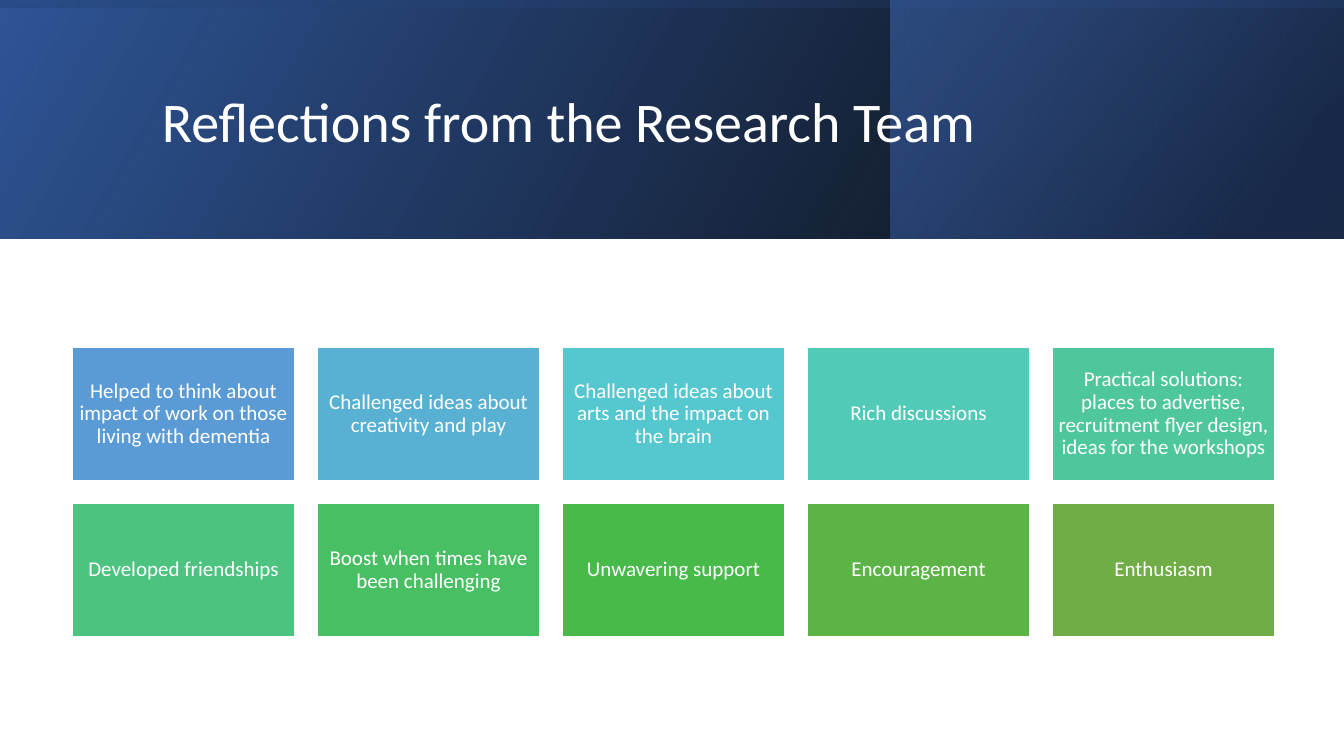
import dataclasses

import lxml.etree
import pptx
import pptx.dml.color
import pptx.enum.shapes
import pptx.enum.text
import pptx.oxml
import pptx.oxml.ns
import pptx.util

RGBColor = pptx.dml.color.RGBColor
WHITE = RGBColor(0xFF, 0xFF, 0xFF)
BLACK = RGBColor(0x00, 0x00, 0x00)
NAVY = RGBColor(0x20, 0x38, 0x64)
DEEP_BLUE = RGBColor(0x2F, 0x55, 0x97)
MID_BLUE = RGBColor(0x44, 0x72, 0xC4)
SKY = RGBColor(0x5B, 0x9B, 0xD5)
AZURE = RGBColor(0x58, 0xB1, 0xD2)
CYAN = RGBColor(0x55, 0xC7, 0xCE)
TURQUOISE = RGBColor(0x52, 0xCA, 0xB8)
SEAFOAM = RGBColor(0x4F, 0xC7, 0x9C)
JADE = RGBColor(0x4C, 0xC3, 0x7F)
EMERALD = RGBColor(0x49, 0xBF, 0x64)
GREEN = RGBColor(0x47, 0xBA, 0x49)
LEAF = RGBColor(0x5C, 0xB4, 0x47)
OLIVE = RGBColor(0x70, 0xAD, 0x47)

PX_PER_INCH = 100.8
SLIDE_WIDTH, SLIDE_HEIGHT = 1344, 756
BANNER_HEIGHT = 239
COLUMNS = 5
CARD_LEFT, CARD_TOP = 72, 347
CARD_WIDTH, CARD_HEIGHT = 223, 134
CARD_STEP_X, CARD_STEP_Y = 245, 156
CARD_INSET = 6


@dataclasses.dataclass(frozen=True)
class Box:
    left: int
    top: int
    width: int
    height: int

    def emu(self) -> tuple[int, ...]:
        return tuple(px(value) for value in dataclasses.astuple(self))


@dataclasses.dataclass(frozen=True)
class Stop:
    position: int
    color: RGBColor
    opacity: int


@dataclasses.dataclass(frozen=True)
class BannerLayer:
    box: Box
    stops: tuple[Stop, ...]
    angle: int
    rotation: int = 0


@dataclasses.dataclass(frozen=True)
class Card:
    text: str
    color: RGBColor


BANNER_LAYERS = [
    BannerLayer(
        Box(0, 0, SLIDE_WIDTH, BANNER_HEIGHT),
        (Stop(0, BLACK, 96), Stop(100, DEEP_BLUE, 100)),
        330,
    ),
    BannerLayer(
        Box(891, 0, 452, BANNER_HEIGHT),
        (Stop(19, NAVY, 68), Stop(100, MID_BLUE, 48)),
        320,
    ),
    BannerLayer(
        Box(552, -552, BANNER_HEIGHT, SLIDE_WIDTH),
        (Stop(23, DEEP_BLUE, 16), Stop(99, BLACK, 45)),
        350,
        270,
    ),
]

CARDS = [
    Card("Helped to think about impact of work on those living with dementia", SKY),
    Card("Challenged ideas about creativity and play", AZURE),
    Card("Challenged ideas about arts and the impact on the brain", CYAN),
    Card("Rich discussions", TURQUOISE),
    Card(
        "Practical solutions: places to advertise, recruitment flyer design, "
        "ideas for the workshops",
        SEAFOAM,
    ),
    Card("Developed friendships", JADE),
    Card("Boost when times have been challenging", EMERALD),
    Card("Unwavering support", GREEN),
    Card("Encouragement", LEAF),
    Card("Enthusiasm", OLIVE),
]


def px(value: int) -> int:
    return round(value * 914400 / PX_PER_INCH)


def set_attributes(target: object, values: dict) -> None:
    for name, value in values.items():
        setattr(target, name, value)


def add_rectangle(slide, box: Box):
    shape = slide.shapes.add_shape(
        pptx.enum.shapes.MSO_SHAPE.RECTANGLE, *box.emu()
    )
    shape.shadow.inherit = False
    return shape


def write_text(shape, text: str, size: int, alignment, inset: dict) -> None:
    frame = shape.text_frame
    set_attributes(
        frame,
        {
            "word_wrap": True,
            "vertical_anchor": pptx.enum.text.MSO_ANCHOR.MIDDLE,
            **inset,
        },
    )
    paragraph = frame.paragraphs[0]
    set_attributes(
        paragraph, {"text": text, "alignment": alignment, "line_spacing": 0.9}
    )
    font = paragraph.runs[0].font
    set_attributes(font, {"name": "Calibri", "size": pptx.util.Pt(size)})
    font.color.rgb = WHITE


def gradient_fill(layer: BannerLayer) -> lxml.etree.ElementBase:
    stops = "".join(
        f'<a:gs pos="{stop.position * 1000}"><a:srgbClr val="{stop.color}">'
        f'<a:alpha val="{stop.opacity * 1000}"/></a:srgbClr></a:gs>'
        for stop in layer.stops
    )
    return pptx.oxml.parse_xml(
        f'<a:gradFill {pptx.oxml.ns.nsdecls("a")} rotWithShape="1">'
        f"<a:gsLst>{stops}</a:gsLst>"
        f'<a:lin ang="{layer.angle * 60000}" scaled="0"/></a:gradFill>'
    )


def add_banner_layer(slide, layer: BannerLayer) -> None:
    shape = add_rectangle(slide, layer.box)
    shape.rotation = layer.rotation
    shape.line.fill.background()
    properties = shape.element.spPr
    properties.find(pptx.oxml.ns.qn("a:xfrm")).set("flipH", "1")
    geometry = properties.find(pptx.oxml.ns.qn("a:prstGeom"))
    geometry.addnext(gradient_fill(layer))


def add_title(slide) -> None:
    title = slide.shapes.add_textbox(*Box(152, 38, 1072, 173).emu())
    write_text(
        title,
        "Reflections from the Research Team",
        40,
        pptx.enum.text.PP_ALIGN.LEFT,
        {},
    )


def add_card(slide, index: int, card: Card) -> None:
    row, column = divmod(index, COLUMNS)
    shape = add_rectangle(
        slide,
        Box(
            CARD_LEFT + column * CARD_STEP_X,
            CARD_TOP + row * CARD_STEP_Y,
            CARD_WIDTH,
            CARD_HEIGHT,
        ),
    )
    shape.fill.solid()
    shape.fill.fore_color.rgb = card.color
    shape.line.color.rgb = WHITE
    shape.line.width = pptx.util.Pt(1)
    inset = {
        f"margin_{side}": px(CARD_INSET) for side in ("left", "top", "right", "bottom")
    }
    write_text(shape, card.text, 15, pptx.enum.text.PP_ALIGN.CENTER, inset)


def main() -> None:
    presentation = pptx.Presentation()
    set_attributes(
        presentation,
        {"slide_width": px(SLIDE_WIDTH), "slide_height": px(SLIDE_HEIGHT)},
    )
    slide = presentation.slides.add_slide(presentation.slide_layouts[6])
    for layer in BANNER_LAYERS:
        add_banner_layer(slide, layer)
    add_title(slide)
    for index, card in enumerate(CARDS):
        add_card(slide, index, card)
    presentation.save("out.pptx")


if __name__ == "__main__":
    main()
